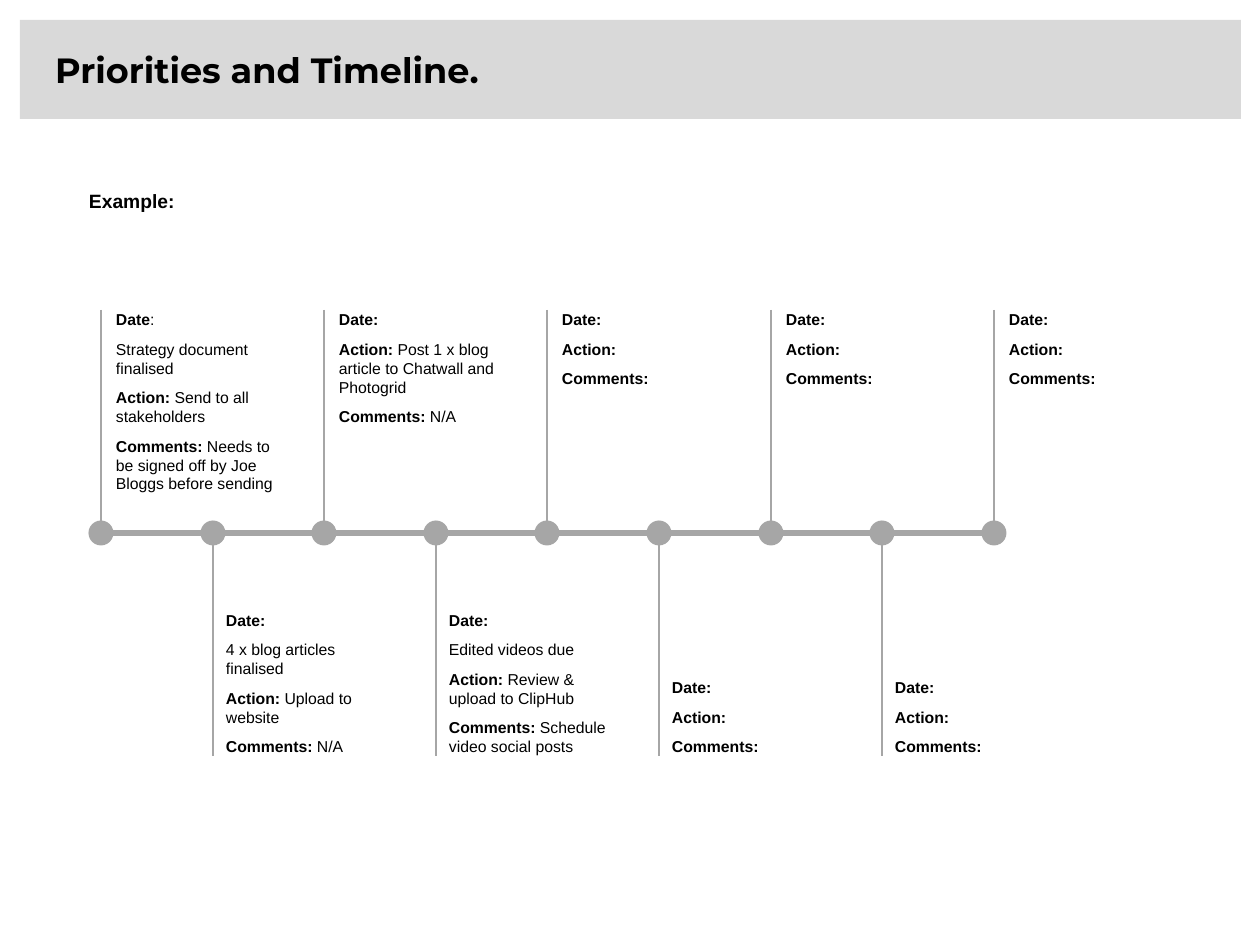
"""Build the priorities and timeline slide."""
from lxml import etree
from pptx import Presentation
from pptx.dml.color import RGBColor
from pptx.enum.shapes import MSO_CONNECTOR, MSO_SHAPE
from pptx.enum.text import MSO_ANCHOR, MSO_AUTO_SIZE, PP_ALIGN
from pptx.oxml.ns import qn
from pptx.util import Pt

RECT, OVAL = MSO_SHAPE.RECTANGLE, MSO_SHAPE.OVAL
STRAIGHT = MSO_CONNECTOR.STRAIGHT
TOP, BOTTOM = MSO_ANCHOR.TOP, MSO_ANCHOR.BOTTOM
GROW = MSO_AUTO_SIZE.SHAPE_TO_FIT_TEXT
LEFT = PP_ALIGN.LEFT
PX = 914400 / 126
GREY, PALE, BLACK = "A6A6A6", "D9D9D9", "000000"


def emu(*px):
    return [round(n * PX) for n in px]


def write(shape, paras, box, size=9, font="Arial", anchor=TOP, after=0):
    shape.left, shape.top, shape.width, shape.height = emu(*box)
    frame = shape.text_frame
    frame.margin_left = frame.margin_top = 0
    frame.margin_right = frame.margin_bottom = 0
    frame.word_wrap, frame.auto_size = True, GROW
    frame.vertical_anchor = anchor
    for i, (label, body) in enumerate(paras):
        para = frame.add_paragraph() if i else frame.paragraphs[0]
        para.alignment, para.space_after = LEFT, Pt(after)
        for words, bold in ((label, True), (body, False)):
            if words:
                run = para.add_run()
                run.text = words
                run.font.size, run.font.name = Pt(size), font
                run.font.bold = bold
                run.font.color.rgb = RGBColor.from_string(BLACK)


deck = Presentation()
deck.slide_width, deck.slide_height = emu(1260, 945)
slide = deck.slides.add_slide(deck.slide_layouts[5])
shapes = slide.shapes
title = shapes.title
write(title, [("Priorities and Timeline.", "")], (55, 48, 804, 43),
      size=20, font="Montserrat")
write(shapes.add_textbox(0, 0, 0, 0), [("Example:", "")],
      (89, 189, 501, 24), size=11)

blank = [("Date:", ""), ("Action:", ""), ("Comments:", "")]
steps = [
    (184, [("Date", ":"), ("", "Strategy document finalised"),
           ("Action: ", "Send to all stakeholders"),
           ("Comments: ",
            "Needs to be signed off by Joe Bloggs before sending")]),
    (146, [("Date:", ""), ("", "4 x blog articles finalised"),
           ("Action: ", "Upload to website"), ("Comments: ", "N/A")]),
    (117, [("Date:", ""),
           ("Action: ", "Post 1 x blog article to Chatwall and Photogrid"),
           ("Comments: ", "N/A")]),
    (146, [("Date:", ""), ("", "Edited videos due"),
           ("Action: ", "Review & upload to ClipHub"),
           ("Comments: ", "Schedule video social posts")]),
] + [(78, blank)] * 5

axis, stem, dot = 533, 223, 25
marks = [round(101 + 111.6 * i) for i in range(len(steps))]
fills = [(RECT, (20, 20, 1221, 99), PALE)]
fills += [(OVAL, (x - dot / 2, axis - dot / 2, dot, dot), GREY) for x in marks]
for kind, box, tint in fills:
    shape = shapes.add_shape(kind, *emu(*box))
    shape.shadow.inherit = False
    shape.fill.solid()
    shape.fill.fore_color.rgb = RGBColor.from_string(tint)
    shape.line.fill.background()
    if kind == RECT:
        title.element.addprevious(shape.element)

lines = [((111, axis, 987, axis), 3)]
for i, (x, (high, paras)) in enumerate(zip(marks, steps)):
    below = i % 2
    end = axis + stem if below else axis - stem
    lines.append(((x, min(axis, end), x, max(axis, end)), 1.5))
    box = (x + 13, end - high, 161, high) if below else (x + 15, end, 161, high)
    write(shapes.add_textbox(0, 0, 0, 0), paras, box,
          anchor=BOTTOM if below else TOP, after=6)

for ends, width in lines:
    line = shapes.add_connector(STRAIGHT, *emu(*ends))
    line.line.width = Pt(width)
    line.line.color.rgb = RGBColor.from_string(GREY)
    etree.SubElement(line.element.spPr, qn("a:effectLst"))

deck.save("out.pptx")
